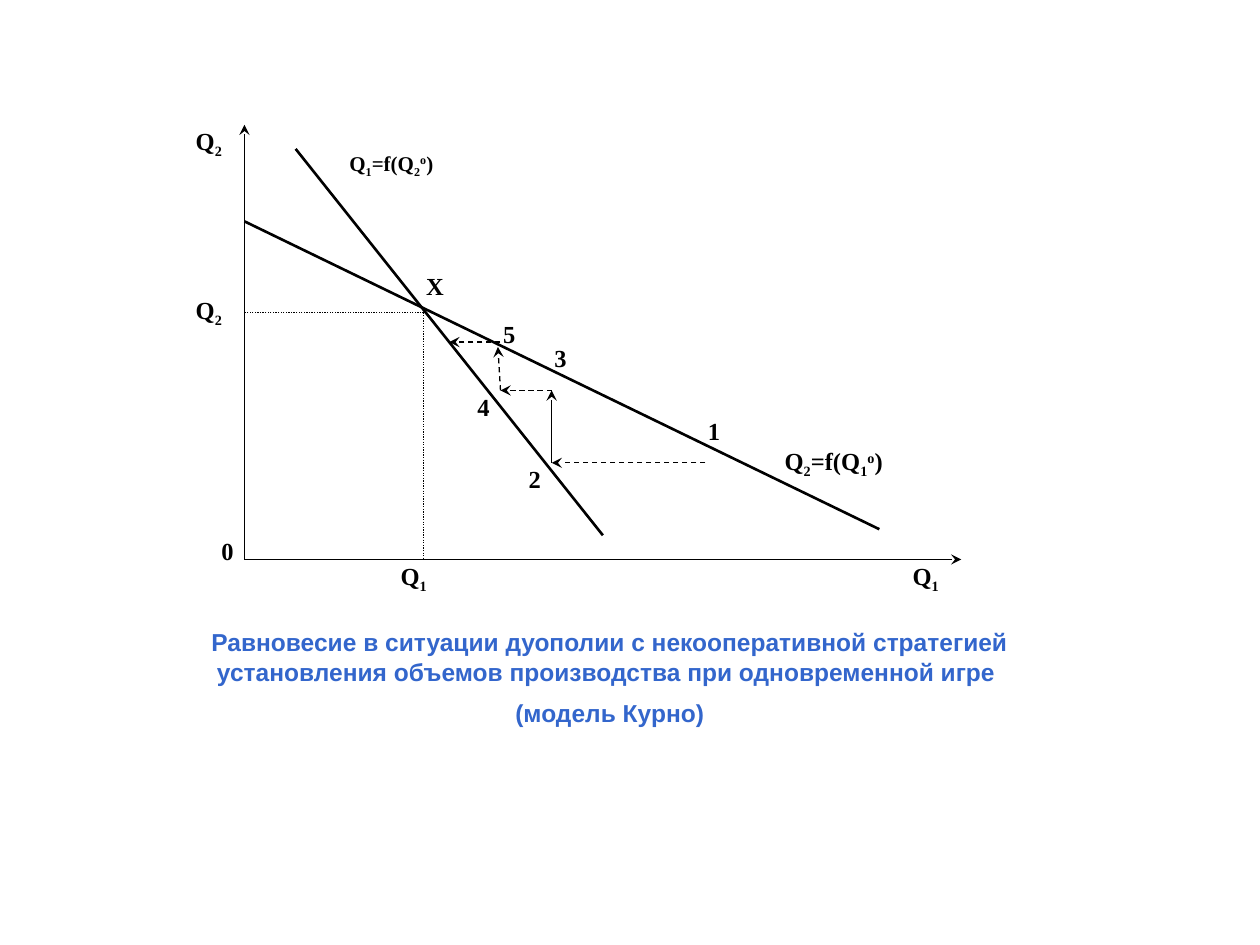
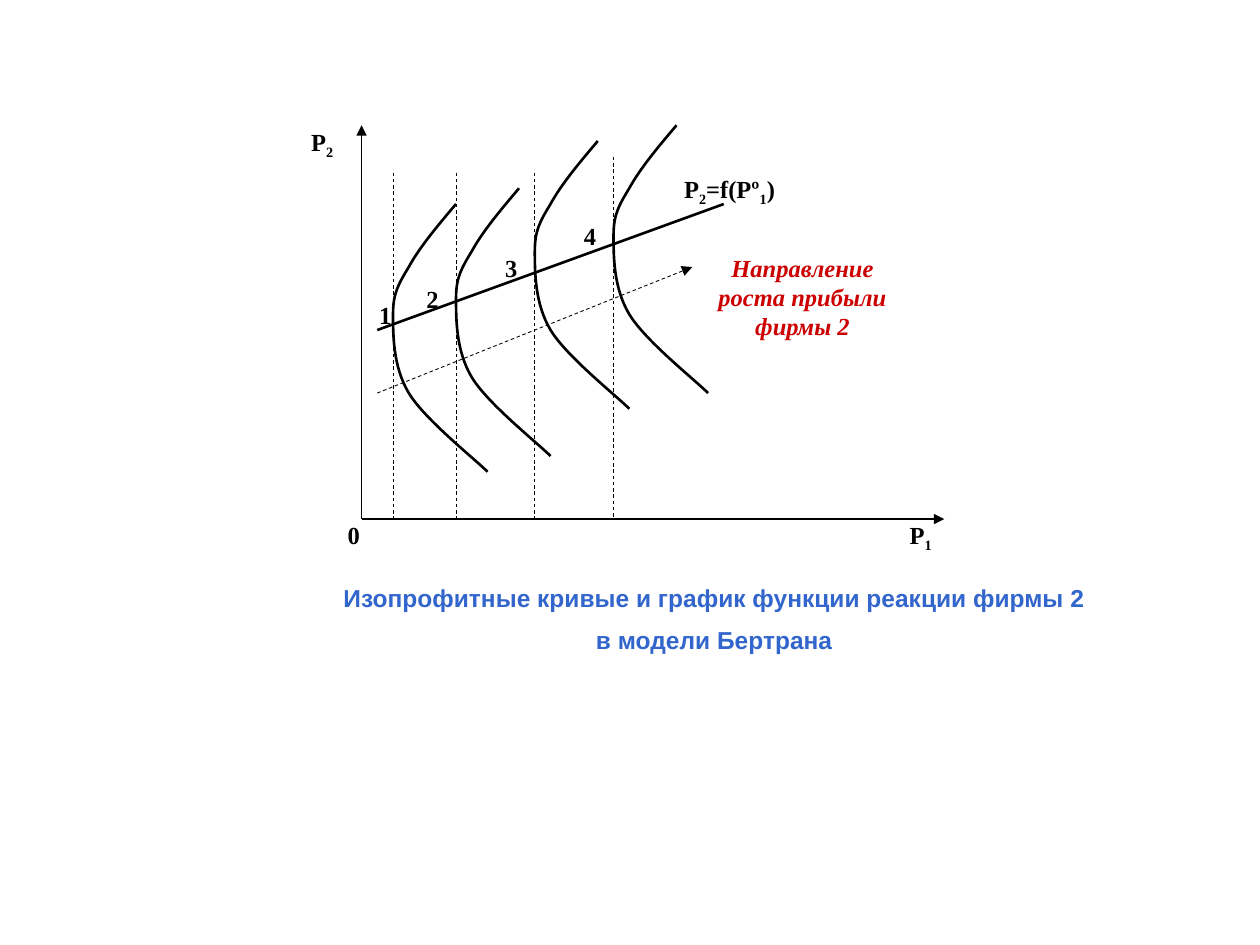
import dataclasses

import pptx
import pptx.dml.color
import pptx.enum.dml
import pptx.enum.text
import pptx.oxml
import pptx.oxml.ns
import pptx.util

Pt = pptx.util.Pt
RGBColor = pptx.dml.color.RGBColor
ALIGN = pptx.enum.text.PP_ALIGN
DASH = pptx.enum.dml.MSO_LINE.DASH
DOT = pptx.enum.dml.MSO_LINE.ROUND_DOT

BLACK = RGBColor(0x00, 0x00, 0x00)
BLUE = RGBColor(0x33, 0x66, 0xCC)
RED = RGBColor(0xCC, 0x00, 0x00)
LABEL_FONT, CAPTION_FONT = "Times New Roman", "Arial"
BASELINES = {"_": "-25000", "^": "30000"}
THIN, AXIS, BOLD = 0.5, 0.75, 1.5

# Isoprofit curve: start point, then three Bezier points per segment,
# in points from its left edge and top
ISOPROFIT = [(36, 0),
             (25, 13), (15, 25), (9, 36),
             (3, 46), (0, 51), (0, 63),
             (0, 75), (0, 93), (9, 108),
             (18, 123), (46.5, 145.5), (54, 153)]


@dataclasses.dataclass
class Plane:
    """Coordinate plane: origin and unit lengths in points, y upwards."""
    slide: object
    x0: float
    y0: float
    ux: float
    uy: float

    def at(self, x, y):
        return Pt(self.x0 + x * self.ux), Pt(self.y0 - y * self.uy)


def add_run(p, text, size, font=LABEL_FONT, color=BLACK, italic=None, baseline=None):
    r = p.add_run()
    r.text = text
    r.font.name, r.font.size = font, Pt(size)
    r.font.bold, r.font.italic = True, italic
    r.font.color.rgb = color
    if baseline:
        r._r.get_or_add_rPr().set("baseline", baseline)


def add_formula(p, text, size, **style):
    """Add runs; "_" lowers and "^" raises the character that follows."""
    plain, chars = "", iter(text)
    for ch in chars:
        if ch in BASELINES:
            if plain:
                add_run(p, plain, size, **style)
            add_run(p, next(chars), size, baseline=BASELINES[ch], **style)
            plain = ""
        else:
            plain += ch
    if plain:
        add_run(p, plain, size, **style)


def set_frame(tf):
    tf.word_wrap = True
    tf.auto_size = pptx.enum.text.MSO_AUTO_SIZE.NONE
    tf.vertical_anchor = pptx.enum.text.MSO_ANCHOR.TOP
    tf.margin_left = tf.margin_right = Pt(1.44)
    tf.margin_top = tf.margin_bottom = Pt(0.72)


def add_label(plane, text, x, y, w, h, size=14, align=ALIGN.LEFT, **style):
    sp = plane.slide.shapes.add_textbox(*plane.at(x, y), Pt(w), Pt(h))
    set_frame(sp.text_frame)
    p = sp.text_frame.paragraphs[0]
    p.alignment = align
    add_formula(p, text, size, **style)


def add_caption(plane, lines, x, y, w, h):
    sp = plane.slide.shapes.title
    sp.left, sp.top = plane.at(x, y)
    sp.width, sp.height = Pt(w), Pt(h)
    tf = sp.text_frame
    set_frame(tf)
    for i, line in enumerate(lines):
        p = tf.add_paragraph() if i else tf.paragraphs[0]
        p.alignment = ALIGN.CENTER
        p.space_before = Pt(7 if i else 0)
        add_run(p, line, 14, CAPTION_FONT, BLUE)


def add_line(plane, start, end, width=AXIS, dash=None, head=None):
    ln = plane.slide.shapes.add_connector(
        pptx.enum.shapes.MSO_CONNECTOR.STRAIGHT, *plane.at(*start), *plane.at(*end))
    ln.line.color.rgb = BLACK
    ln.line.width = Pt(width)
    if dash:
        ln.line.dash_style = dash
    if head:
        tail = pptx.oxml.parse_xml(
            f'<a:tailEnd {pptx.oxml.ns.nsdecls("a")} type="{head}"/>')
        ln.line._get_or_add_ln().append(tail)
    ln._element.spPr.append(
        pptx.oxml.parse_xml(f'<a:effectLst {pptx.oxml.ns.nsdecls("a")}/>'))


def add_axes(plane, width, height, head):
    add_line(plane, (0, 0), (0, height), head=head)
    add_line(plane, (0, 0), (width, 0), head=head)


def add_isoprofit(plane, x, y):
    left, top = plane.at(x, y)
    points = [(left + Pt(dx), top + Pt(dy)) for dx, dy in ISOPROFIT]
    fb = plane.slide.shapes.build_freeform(*points[0])
    fb.add_line_segments(points[1:], close=False)
    sp = fb.convert_to_shape()
    sp.shadow.inherit = False
    sp.fill.background()
    sp.line.color.rgb = BLACK
    sp.line.width = Pt(BOLD)
    # Turn every three straight segments into one Bezier segment
    qn = pptx.oxml.ns.qn
    segments = list(sp._element.iter(qn("a:lnTo")))
    outline = segments[0].getparent()
    for i in range(0, len(segments), 3):
        curve = pptx.oxml.parse_xml(f'<a:cubicBezTo {pptx.oxml.ns.nsdecls("a")}/>')
        for segment in segments[i:i + 3]:
            curve.append(segment.find(qn("a:pt")))
            outline.remove(segment)
        outline.append(curve)


def cournot_slide(slide):
    plane = Plane(slide, 139.7, 319.7, 14.63, 13.8)
    add_axes(plane, 28, 18, "stealth")

    # Reaction lines and equilibrium guides
    add_line(plane, (0, 14), (24.8, 1.25), BOLD)
    add_line(plane, (2, 17), (14, 1), BOLD)
    add_line(plane, (7, 10.22), (0, 10.22), dash=DOT)
    add_line(plane, (7, 10.22), (7, 0), dash=DOT)

    # Steps towards the equilibrium
    for start, end, dash in [((18, 4), (12, 4), DASH),
                             ((12, 4), (12, 7), None),
                             ((12, 7), (10, 7), DASH),
                             ((10, 7), (9.9, 8.8), DASH),
                             ((10, 9), (8, 9), DASH)]:
        add_line(plane, start, end, dash=dash, head="stealth")

    # Axis, point and function labels
    for text, x, y in [("Q_1", 26, 0), ("Q_2", -2, 18), ("0", -1, 1),
                       ("Q_2", -2, 11), ("Q_1", 6, 0)]:
        add_label(plane, text, x, y, 29.3, 27.6)
    for text, x, y in [("1", 18, 6), ("2", 11, 4), ("3", 12, 9),
                       ("4", 9, 7), ("5", 10, 10), ("X", 7, 12)]:
        add_label(plane, text, x, y, 14.6, 27.6)
    add_label(plane, "Q_1=f(Q_2^o)", 4, 17, 88, 27.6, size=12)
    add_label(plane, "Q_2=f(Q_1^o)", 21, 4.75, 88, 27.6)

    add_caption(plane, ["Равновесие в ситуации дуополии с некооперативной стратегией "
                        "установления объемов производства при одновременной игре ",
                        "(модель Курно)"], -2, -2.76, 476, 76.3)


def bertrand_slide(slide):
    plane = Plane(slide, 206.6, 296.6, 9, 9)
    add_axes(plane, 37, 25, "triangle")

    # Reaction line and direction of profit growth
    add_line(plane, (1, 12), (23, 20), BOLD)
    add_line(plane, (1, 8), (21, 16), THIN, DASH, "triangle")

    # Isoprofit curves with their tangents
    for x, tangent_top, curve_top in [(2, 22, 20), (6, 22, 21), (11, 22, 24), (16, 23, 25)]:
        add_line(plane, (x, tangent_top), (x, 0), THIN, DASH)
        add_isoprofit(plane, x, curve_top)

    # Labels
    for text, x, y in [("Р_2", -4, 25), ("Р_1", 34, 0), ("0", -2, 0),
                       ("1", 0, 14), ("2", 3, 15), ("3", 8, 17), ("4", 13, 19)]:
        add_label(plane, text, x, y, 27, 27, align=ALIGN.CENTER)
    add_label(plane, "Р_2=f(Pº_1)".replace("P", "Р"), 19, 22, 78.5, 29.5, align=ALIGN.CENTER)
    add_label(plane, "Направление роста прибыли фирмы 2", 22, 17, 108, 63,
              align=ALIGN.CENTER, color=RED, italic=True)

    add_caption(plane, ["Изопрофитные кривые и график функции реакции фирмы 2",
                        "в модели Бертрана"], -5, -4, 493, 54)


def main():
    prs = pptx.Presentation()
    prs.slide_width, prs.slide_height = Pt(720), Pt(540)
    title_only = prs.slide_layouts[5]
    for build in (cournot_slide, bertrand_slide):
        build(prs.slides.add_slide(title_only))
    prs.save("out.pptx")


if __name__ == "__main__":
    main()
